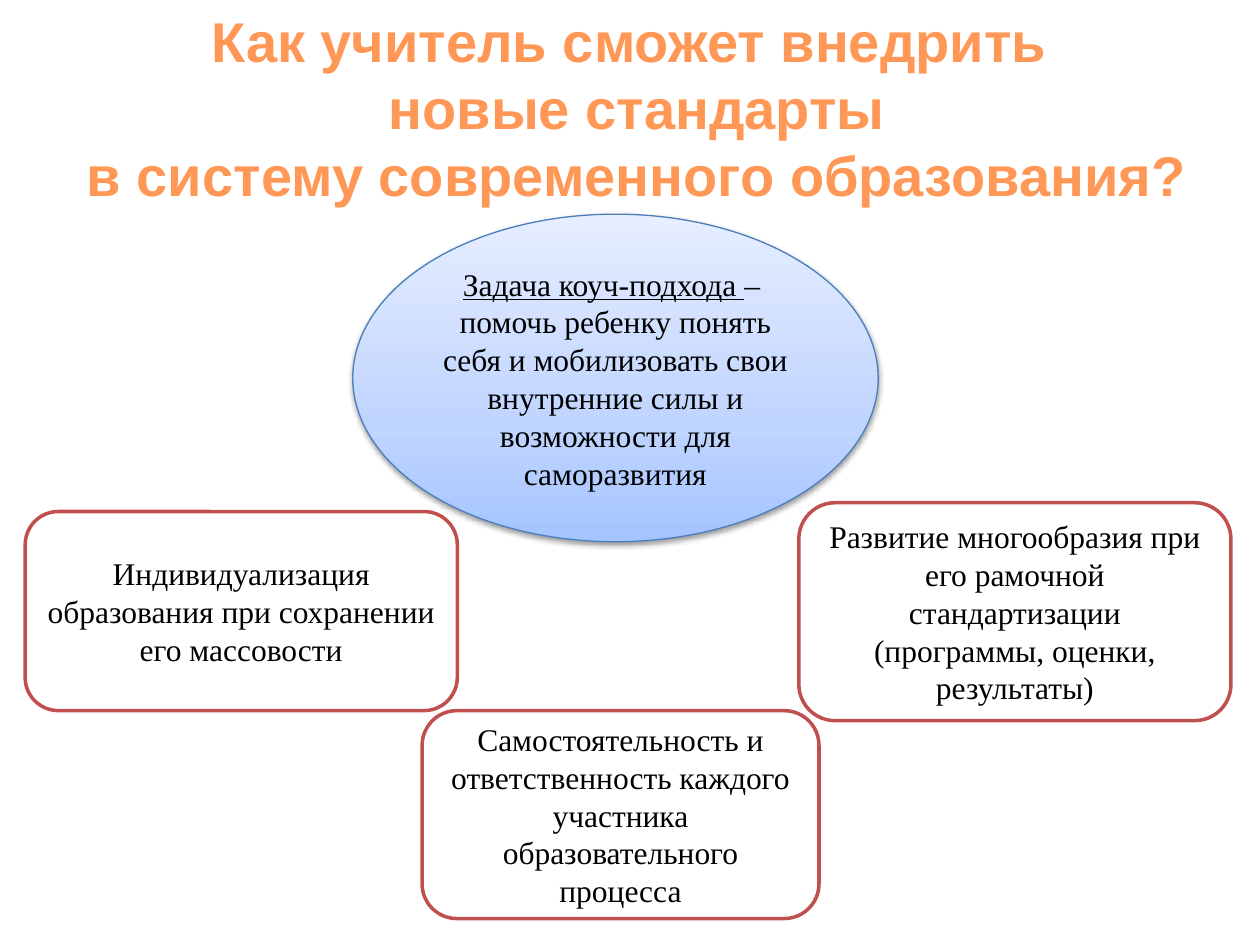
from copy import deepcopy
from dataclasses import dataclass

from lxml import etree
from pptx import Presentation
from pptx import util as u
from pptx.dml.color import RGBColor
from pptx.enum import shapes, text
from pptx.oxml.ns import qn


@dataclass(frozen=True)
class Theme:
    title_font: str = "Arial"
    body_font: str = "Times New Roman"
    title_size: int = 32
    body_size: int = 18
    title_color: str = "FF9856"
    ink: str = "000000"
    paper: str = "FFFFFF"
    box_line: str = "C0504D"
    oval_line: str = "4B7EBC"
    # Position in percent and colour, from the bottom up
    oval_stops: tuple = ((0, "A4C4FF"), (35, "BFD4FF"), (100, "E6EEFF"))


def write(para, words, *, font, size, color, bold=False, underline=False):
    """Add a formatted, centred span of text to a paragraph."""
    para.alignment = text.PP_ALIGN.CENTER
    span = para.add_run()
    span.text = words
    span.font.name = font
    span.font.size = u.Pt(size)
    span.font.bold = bold
    span.font.underline = underline
    span.font.color.rgb = RGBColor.from_string(color)


class SlideBuilder:
    def __init__(self, deck, theme):
        self.theme = theme
        self.page = deck.slides.add_slide(deck.slide_layouts[5])
        self.body = dict(font=theme.body_font, size=theme.body_size, color=theme.ink)

    def title(self, lines, left, top, width, height):
        box = self.page.shapes.title
        box.left, box.top = u.Inches(left), u.Inches(top)
        box.width, box.height = u.Inches(width), u.Inches(height)
        frame = box.text_frame
        frame.word_wrap = False
        frame.auto_size = text.MSO_AUTO_SIZE.SHAPE_TO_FIT_TEXT
        frame.vertical_anchor = text.MSO_ANCHOR.TOP
        for number, line in enumerate(lines):
            para = frame.add_paragraph() if number else frame.paragraphs[0]
            write(para, line, font=self.theme.title_font, size=self.theme.title_size,
                  color=self.theme.title_color, bold=True)

    def outlined(self, kind, place, line, weight):
        """Add a preset shape with an outline and middle-anchored text."""
        shape = self.page.shapes.add_shape(kind, *map(u.Inches, place))
        shape.shadow.inherit = False
        shape.line.color.rgb = RGBColor.from_string(line)
        shape.line.width = u.Pt(weight)
        shape.text_frame.word_wrap = True
        shape.text_frame.vertical_anchor = text.MSO_ANCHOR.MIDDLE
        return shape

    def box(self, words, *place):
        shape = self.outlined(shapes.MSO_SHAPE.ROUNDED_RECTANGLE, place,
                              self.theme.box_line, 2)
        shape.fill.solid()
        shape.fill.fore_color.rgb = RGBColor.from_string(self.theme.paper)
        write(shape.text_frame.paragraphs[0], words, **self.body)

    def oval(self, heading, dash, words, *place):
        shape = self.outlined(shapes.MSO_SHAPE.OVAL, place, self.theme.oval_line, 0.75)
        self.shade(shape.fill)
        self.drop_shadow(shape)
        frame = shape.text_frame
        write(frame.paragraphs[0], heading, underline=True, **self.body)
        write(frame.paragraphs[0], dash, **self.body)
        write(frame.add_paragraph(), words, **self.body)

    def shade(self, fill):
        fill.gradient()
        fill.gradient_angle = 90
        # The default gradient has two stops; a third is cloned
        stops = fill._fill._gradFill.find(qn("a:gsLst"))
        stops.append(deepcopy(stops[-1]))
        for stop, (position, color) in zip(fill.gradient_stops, self.theme.oval_stops):
            stop.position = position / 100
            stop.color.rgb = RGBColor.from_string(color)

    def drop_shadow(self, shape):
        effects = shape._element.spPr.find(qn("a:effectLst"))
        shadow = etree.SubElement(effects, qn("a:outerShdw"), blurRad="40000",
                                  dist="20000", dir="5400000", rotWithShape="0")
        color = etree.SubElement(shadow, qn("a:srgbClr"), val=self.theme.ink)
        etree.SubElement(color, qn("a:alpha"), val="38000")


def main():
    deck = Presentation()
    deck.slide_width, deck.slide_height = u.Inches(10), u.Inches(7.5)
    slide = SlideBuilder(deck, Theme())

    # Question at the top
    slide.title(["Как учитель сможет внедрить ", "новые стандарты",
                 "в систему современного образования?"], 0.56, 0, 8.99, 1.72)

    # Central task
    slide.oval("Задача коуч-подхода ", "– ",
               "помочь ребенку понять себя и мобилизовать свои внутренние силы "
               "и возможности для саморазвития", 2.8, 1.7, 4.17, 2.6)

    # Three principles around it
    slide.box("Индивидуализация образования при сохранении его массовости",
              0.2, 4.06, 3.43, 1.58)
    slide.box("Самостоятельность и ответственность каждого участника "
              "образовательного процесса", 3.35, 5.64, 3.15, 1.65)
    slide.box("Развитие многообразия при его рамочной стандартизации "
              "(программы, оценки, результаты)", 6.34, 3.99, 3.43, 1.73)

    deck.save("out.pptx")


if __name__ == "__main__":
    main()
